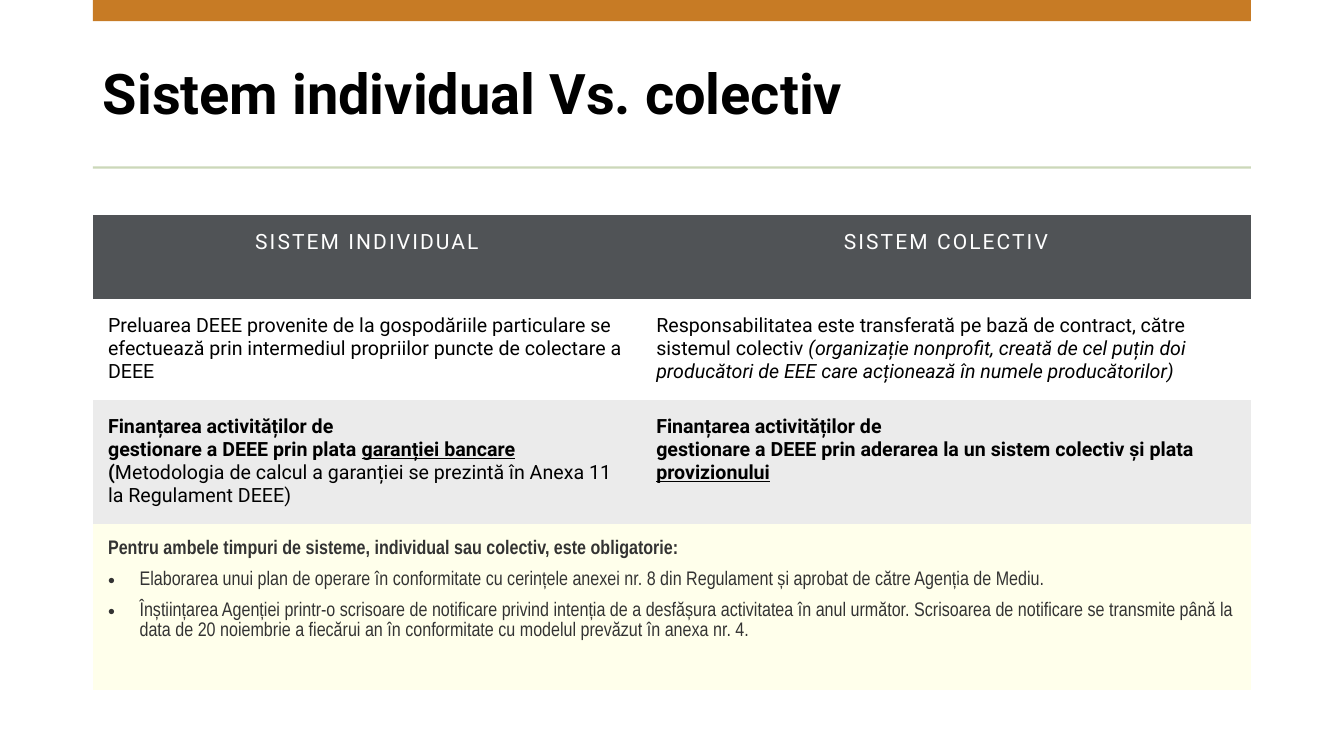
from pptx import Presentation
from pptx.dml.color import RGBColor
from pptx.enum import shapes, text
from pptx.oxml.xmlchemy import OxmlElement
from pptx.util import Pt

TITLE = "Sistem individual Vs. colectiv"
HEADS = ["SISTEM INDIVIDUAL", "SISTEM COLECTIV"]
START = "Finanțarea activităților de\ngestionare a DEEE prin "
BODY = [
    [
        [("Preluarea DEEE provenite de la gospodăriile particulare se efectuează prin "
          "intermediul propriilor puncte de colectare a DEEE", "")],
        [("Responsabilitatea este transferată pe bază de contract, către sistemul colectiv ", ""),
         ("(organizație nonprofit, creată de cel puțin doi producători de EEE care "
          "acționează în numele producătorilor)", "i")],
    ],
    [
        [(START + "plata ", "b"), ("garanției bancare ", "bu"), ("(", "b"),
         ("Metodologia de calcul a garanției se prezintă în Anexa 11 la Regulament DEEE)", "")],
        [(START + "aderarea la un sistem colectiv și plata ", "b"), ("provizionului", "bu")],
    ],
]
NOTES = [
    [("Pentru ambele timpuri de sisteme, individual sau colectiv, este obligatorie:", "b")],
    [("Elaborarea unui plan de operare în conformitate cu cerințele anexei nr. 8 din "
      "Regulament și aprobat de către Agenția de Mediu.", "")],
    [("Înștiințarea Agenției printr-o scrisoare de notificare privind intenția de a "
      "desfășura activitatea în anul următor. Scrisoarea de notificare se transmite până "
      "la data de 20 noiembrie a fiecărui an în conformitate cu modelul prevăzut în "
      "anexa nr. 4.", "")],
]
INK = {"black": "000000", "white": "FFFFFF", "gray": "333333", "head": "505356",
       "band": "EBEBEB", "note": "FFFFEB", "bar": "C77B25", "rule": "CCD8B9"}
LEFT, WIDE = 66.4, 827.2
BARS = [(0, 15.1, "bar"), (118.9, 1.5, "rule")]
COLS = [391.6, 435.6]
ROWS = [60, 71.2, 86.8, 118.4]
TOP = 153.5
PLAIN = "{2D5ABB26-0587-4C30-8999-92F81FD0307C}"


def hue(name):
    return RGBColor.from_string(INK[name])


def write(frame, paras, size=14, font="Roboto", color="black", align=None,
          gap=0, track=0, lead=None, bullets=False):
    frame.word_wrap = True
    for n, runs in enumerate(paras):
        para = frame.paragraphs[0] if n == 0 else frame.add_paragraph()
        para.alignment = align
        para.space_after = Pt(gap)
        if lead:
            para.line_spacing = lead
        if bullets and n:
            props = para._p.get_or_add_pPr()
            props.set("marL", str(Pt(22.5)))
            props.set("indent", str(-Pt(22.5)))
            face = OxmlElement("a:buFont")
            face.set("typeface", "Arial")
            dot = OxmlElement("a:buChar")
            dot.set("char", "•")
            props.extend([face, dot])
        for words, style in runs:
            for k, line in enumerate(words.split("\n")):
                if k:
                    para.add_line_break()
                run = para.add_run()
                run.text = line
                run.font.size = Pt(size)
                run.font.name = font
                run.font.color.rgb = hue(color)
                run.font.bold = "b" in style
                run.font.italic = "i" in style
                run.font.underline = "u" in style
                if track:
                    run._r.get_or_add_rPr().set("spc", str(track))


def paint(cell, color):
    cell.margin_left = cell.margin_right = Pt(10.8)
    cell.margin_top = cell.margin_bottom = Pt(10.8)
    if color:
        cell.fill.solid()
        cell.fill.fore_color.rgb = hue(color)
    else:
        cell.fill.background()


def main():
    deck = Presentation()
    deck.slide_width, deck.slide_height = Pt(960), Pt(540)
    slide = deck.slides.add_slide(deck.slide_layouts[6])

    title = slide.shapes.add_textbox(Pt(LEFT), Pt(26.6), Pt(WIDE), Pt(85)).text_frame
    title.vertical_anchor = text.MSO_ANCHOR.MIDDLE
    write(title, [[(TITLE, "b")]], size=40, lead=0.9)

    for top, high, color in BARS:
        bar = slide.shapes.add_shape(shapes.MSO_SHAPE.RECTANGLE,
                                     Pt(LEFT), Pt(top), Pt(WIDE), Pt(high))
        bar.shadow.inherit = False
        bar.fill.solid()
        bar.fill.fore_color.rgb = hue(color)
        bar.line.fill.background()

    grid = slide.shapes.add_table(len(ROWS), len(COLS), Pt(LEFT), Pt(TOP),
                                  Pt(WIDE), Pt(sum(ROWS))).table
    grid.first_row = grid.horz_banding = False
    grid._tbl.tblPr[0].text = PLAIN
    for col, wide in zip(grid.columns, COLS):
        col.width = Pt(wide)
    for row, high, color in zip(grid.rows, ROWS, ["head", None, "band", "note"]):
        row.height = Pt(high)
        for cell in row.cells:
            paint(cell, color)

    for c, head in enumerate(HEADS):
        write(grid.cell(0, c).text_frame, [[(head, "")]], size=15, color="white",
              align=text.PP_ALIGN.CENTER, track=150)
    for r, line in enumerate(BODY, 1):
        for c, runs in enumerate(line):
            write(grid.cell(r, c).text_frame, [runs])
    grid.cell(3, 0).merge(grid.cell(3, 1))
    write(grid.cell(3, 0).text_frame, NOTES, font="Arial Narrow", color="gray",
          gap=8, lead=1.07, bullets=True)

    deck.save("out.pptx")


if __name__ == "__main__":
    main()
